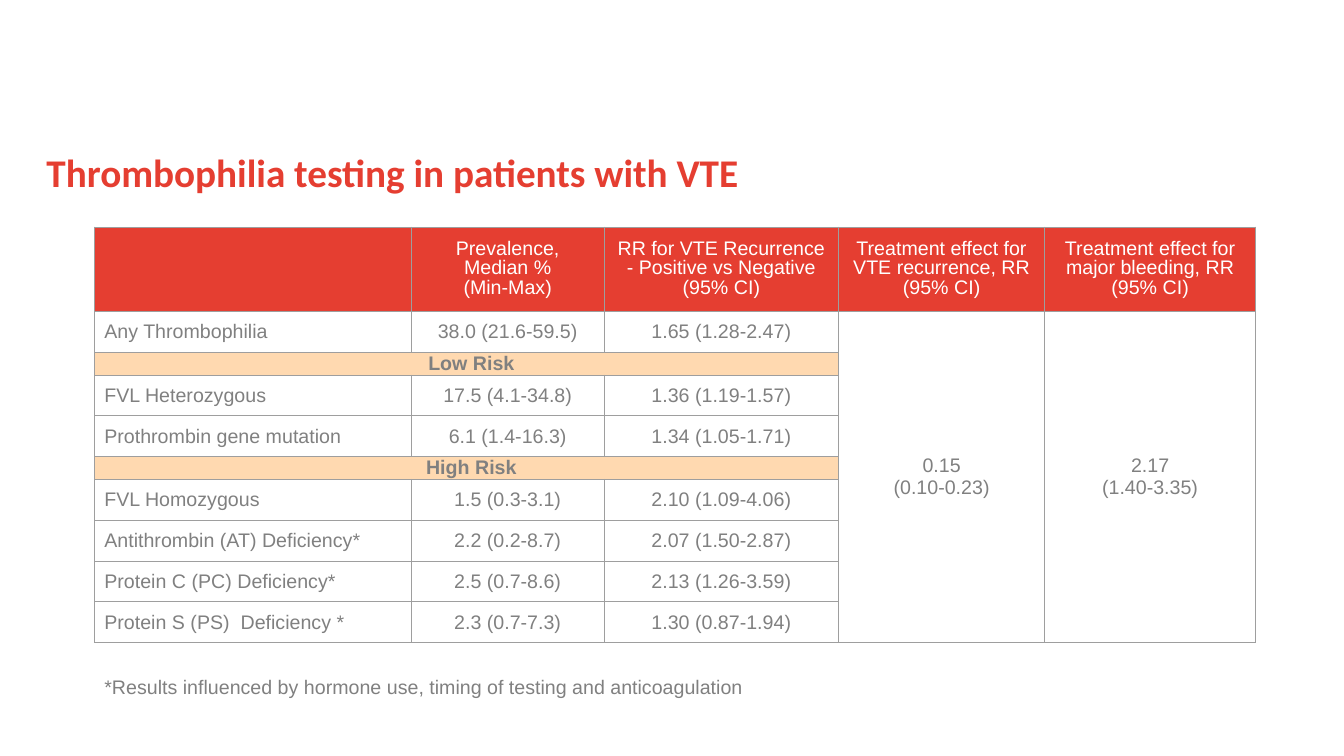
import pptx
import pptx.dml.color
import pptx.enum.text
import pptx.oxml
import pptx.oxml.ns
import pptx.util
from pptx.util import Cm

RED, PEACH, GREY, WHITE, RULE = "E53E31", "FFD9B0", "808080", "FFFFFF", "9E9E9E"
LEFT = pptx.enum.text.PP_ALIGN.LEFT
CENTER = pptx.enum.text.PP_ALIGN.CENTER
TOP = pptx.enum.text.MSO_ANCHOR.TOP
MIDDLE = pptx.enum.text.MSO_ANCHOR.MIDDLE
BODY_FONT = {"name": "Arial", "size": pptx.util.Pt(14), "bold": False}
TITLE_FONT = {"name": "Calibri", "size": pptx.util.Pt(28), "bold": True}

HEADERS = [
    "",
    "Prevalence, Median %\n(Min-Max)",
    "RR for VTE Recurrence - Positive vs Negative (95% CI)",
    "Treatment effect for VTE recurrence, RR (95% CI)",
    "Treatment effect for major bleeding, RR (95% CI)",
]
FINDINGS = [
    ("Any Thrombophilia", "38.0 (21.6-59.5)", "1.65 (1.28-2.47)"),
    ("Low Risk",),
    ("FVL Heterozygous", "17.5 (4.1-34.8)", "1.36 (1.19-1.57)"),
    ("Prothrombin gene mutation", "6.1 (1.4-16.3)", "1.34 (1.05-1.71)"),
    ("High Risk",),
    ("FVL Homozygous", "1.5 (0.3-3.1)", "2.10 (1.09-4.06)"),
    ("Antithrombin (AT) Deficiency*", "2.2 (0.2-8.7)", "2.07 (1.50-2.87)"),
    ("Protein C (PC) Deficiency*", "2.5 (0.7-8.6)", "2.13 (1.26-3.59)"),
    ("Protein S (PS)  Deficiency *", "2.3 (0.7-7.3)", "1.30 (0.87-1.94)"),
]
TREATMENT_EFFECTS = {3: "0.15\n(0.10-0.23)", 4: "2.17\n(1.40-3.35)"}
COLUMN_WIDTHS = [7.98, 4.87, 5.9, 5.2, 5.31]
HEADER_HEIGHT, FINDING_HEIGHT, RISK_HEIGHT = 2.13, 1.03, 0.57


def rgb(hex_code):
    """Return the colour for a hex string."""
    return pptx.dml.color.RGBColor.from_string(hex_code)


def apply(target, values):
    """Set each attribute in values on target."""
    for attribute, value in values.items():
        setattr(target, attribute, value)


def write(frame, wording, font, colour, align=LEFT, spacing=None):
    """Fill a text frame with formatted paragraphs, one per line of wording."""
    frame.text = wording
    for paragraph in frame.paragraphs:
        apply(paragraph, {"alignment": align, "line_spacing": spacing})
        for run in paragraph.runs:
            apply(run.font, font)
            run.font.color.rgb = rgb(colour)


def set_margins(frame, left=0, top=0, right=0, bottom=0):
    """Set the four insets of a text frame or cell in centimetres."""
    apply(frame, {"margin_left": Cm(left), "margin_top": Cm(top),
                  "margin_right": Cm(right), "margin_bottom": Cm(bottom)})


def add_borders(cell):
    """Draw a thin rule on all four sides of a cell."""
    properties = cell._tc.get_or_add_tcPr()
    for side in ("lnL", "lnR", "lnT", "lnB"):
        properties.append(pptx.oxml.parse_xml(
            f'<a:{side} {pptx.oxml.ns.nsdecls("a")} w="9525"><a:solidFill>'
            f'<a:srgbClr val="{RULE}"/></a:solidFill></a:{side}>'))


def fill_cell(cell, colour=None):
    """Give a cell a solid fill, or none."""
    if colour:
        cell.fill.solid()
        cell.fill.fore_color.rgb = rgb(colour)
    else:
        cell.fill.background()


def add_title(slide, wording):
    """Place and format the title placeholder."""
    title = slide.shapes.title
    apply(title, {"left": Cm(1.17), "top": Cm(3.73),
                  "width": Cm(30.48), "height": Cm(1.98)})
    frame = title.text_frame
    set_margins(frame)
    apply(frame, {"vertical_anchor": TOP, "word_wrap": True})
    write(frame, wording, TITLE_FONT, RED)


def write_header(table):
    """Fill the red heading row."""
    for column, heading in enumerate(HEADERS):
        cell = table.cell(0, column)
        fill_cell(cell, RED)
        set_margins(cell, 0.33, 0.33, 0.33, 0.33)
        write(cell.text_frame, heading, BODY_FONT, WHITE, CENTER, pptx.util.Pt(13.8))


def write_finding(table, row, finding):
    """Fill one result row, or one risk band across three columns."""
    is_band = len(finding) == 1
    if is_band:
        table.cell(row, 0).merge(table.cell(row, 2))
        fill_cell(table.cell(row, 0), PEACH)
    for column, wording in enumerate(finding):
        cell = table.cell(row, column)
        set_margins(cell, left=0 if column else 0.25)
        align = CENTER if column or is_band else LEFT
        write(cell.text_frame, wording, {**BODY_FONT, "bold": is_band}, GREY, align)


def add_risk_table(slide):
    """Add the table of prevalence, recurrence and treatment effects."""
    heights = [HEADER_HEIGHT] + [
        RISK_HEIGHT if len(finding) == 1 else FINDING_HEIGHT for finding in FINDINGS]
    table = slide.shapes.add_table(
        len(heights), len(COLUMN_WIDTHS), Cm(2.38), Cm(5.72),
        Cm(sum(COLUMN_WIDTHS)), Cm(sum(heights))).table
    apply(table, {"first_row": False, "horz_banding": False})
    for column, width in zip(table.columns, COLUMN_WIDTHS):
        column.width = Cm(width)
    for row, height in zip(table.rows, heights):
        row.height = Cm(height)
    for cell in table.iter_cells():
        add_borders(cell)
        fill_cell(cell)
        set_margins(cell)
        cell.vertical_anchor = MIDDLE
    write_header(table)
    for row, finding in enumerate(FINDINGS, start=1):
        write_finding(table, row, finding)
    for column, effect in TREATMENT_EFFECTS.items():
        table.cell(1, column).merge(table.cell(len(FINDINGS), column))
        write(table.cell(1, column).text_frame, effect, BODY_FONT, GREY, CENTER)


def add_footnote(slide, wording):
    """Add the note below the table."""
    footnote = slide.shapes.add_textbox(Cm(2.38), Cm(16.89), Cm(26.57), Cm(0.86))
    footnote.text_frame.word_wrap = True
    write(footnote.text_frame, wording, BODY_FONT, GREY)


def main():
    """Build the slide and save it."""
    deck = pptx.Presentation()
    apply(deck, {"slide_width": Cm(33.87), "slide_height": Cm(19.05)})
    slide = deck.slides.add_slide(deck.slide_layouts[5])
    add_title(slide, "Thrombophilia testing in patients with VTE")
    add_risk_table(slide)
    add_footnote(slide, "*Results influenced by hormone use, timing of testing and anticoagulation")
    deck.save("out.pptx")


if __name__ == "__main__":
    main()
